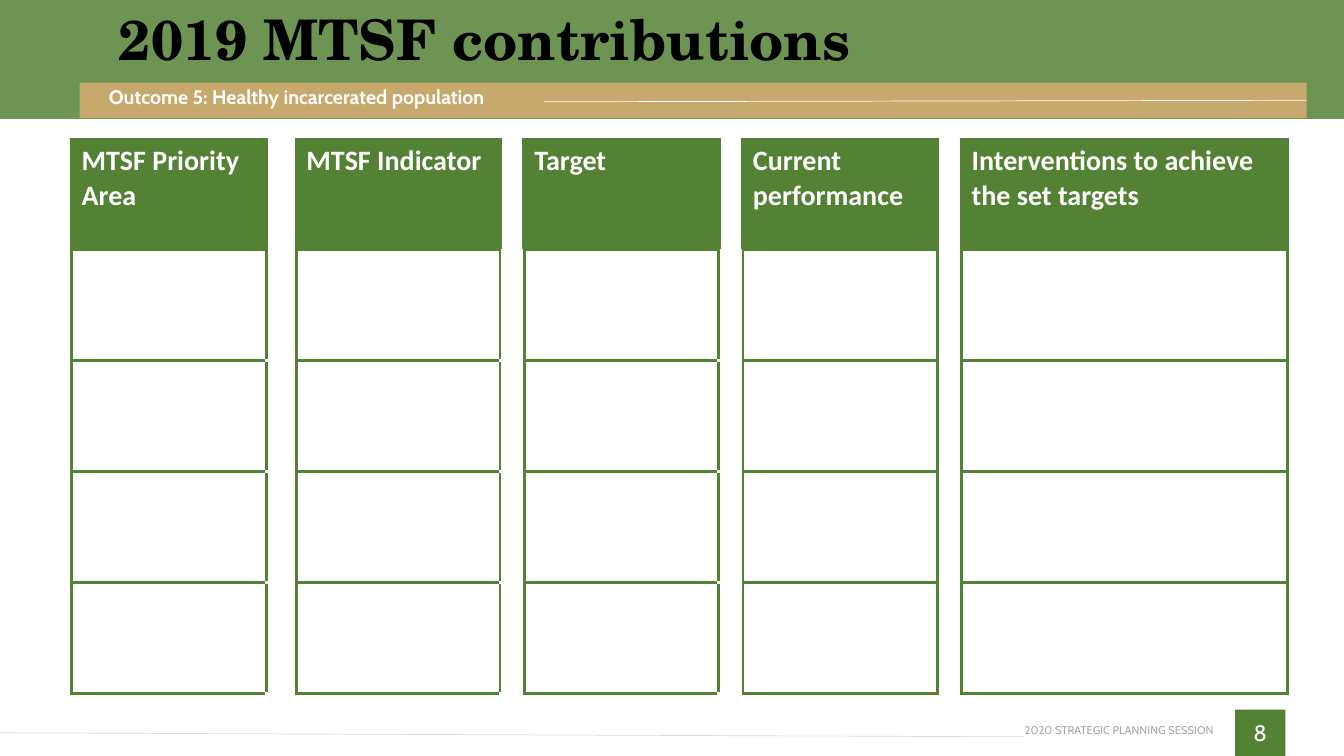
from dataclasses import dataclass

import lxml.etree
import pptx
import pptx.dml.color
import pptx.enum.shapes
import pptx.enum.text
import pptx.oxml.ns
import pptx.util

Inches = pptx.util.Inches
Kind = pptx.enum.shapes.MSO_SHAPE
Align = pptx.enum.text.PP_ALIGN
Anchor = pptx.enum.text.MSO_ANCHOR
Fit = pptx.enum.text.MSO_AUTO_SIZE
qn = pptx.oxml.ns.qn


@dataclass(frozen=True)
class Theme:
    green: str = "548235"
    gold: str = "C7A96E"
    white: str = "FFFFFF"
    black: str = "000000"
    pale: str = "D9D9D9"
    gray: str = "A6A6A6"
    head: str = "TeX Gyre Schola"
    body: str = "Cabin"
    grid: str = "Calibri"
    title: float = 40
    label: float = 20
    page: float = 16
    sub: float = 14
    foot: float = 8
    thin: float = 0.5
    edge: float = 2.25
    thick: float = 3


@dataclass(frozen=True)
class Box:
    left: float
    top: float
    width: float
    height: float
    fill: str
    kind: Kind = Kind.RECTANGLE


@dataclass(frozen=True)
class Note:
    left: float
    top: float
    width: float
    height: float
    text: str
    size: float
    color: str
    bold: bool
    align: Align


@dataclass(frozen=True)
class Column:
    width: float
    label: str = ""
    gap: bool = False
    rule: str | None = None


THEME = Theme()
PAGE = Box(12.25, 7.04, 0.5, 0.46, THEME.green)
BAND = Box(0, 0, 13.33, 1.18, THEME.green)
STRIP = Box(0.79, 0.82, 12.17, 0.35, THEME.gold, Kind.ROUNDED_RECTANGLE)
NOTES = (
    Note(10.15, 7.18, 1.89, 0.13, "2020 STRATEGIC PLANNING SESSION",
         THEME.foot, THEME.gray, False, Align.RIGHT),
    Note(1.08, 0.84, 7.51, 0.24, "Outcome 5: Healthy incarcerated population",
         THEME.sub, THEME.white, True, Align.LEFT),
)
COLUMNS = (
    Column(1.93, "MTSF Priority Area"),
    Column(0.3, gap=True, rule=THEME.white),
    Column(2.02, "MTSF Indicator"),
    Column(0.23, gap=True, rule=THEME.white),
    Column(1.93, "Target"),
    Column(0.23, gap=True, rule=THEME.white),
    Column(1.93, "Current performance"),
    Column(0.23, gap=True),
    Column(3.23, "Interventions to achieve the set targets"),
)
ROWS = 5
ROW_HEIGHT = 1.1


def paint(color: str) -> pptx.dml.color.RGBColor:
    return pptx.dml.color.RGBColor.from_string(color)


def style(para, face: str, size: float, color: str, bold: bool = False) -> None:
    para.font.name = face
    para.font.size = pptx.util.Pt(size)
    para.font.bold = bold
    para.font.color.rgb = paint(color)


def add_box(slide, box: Box):
    shape = slide.shapes.add_shape(
        box.kind, Inches(box.left), Inches(box.top),
        Inches(box.width), Inches(box.height))
    shape.shadow.inherit = False
    shape.fill.solid()
    shape.fill.fore_color.rgb = paint(box.fill)
    shape.line.fill.background()
    return shape


def add_line(slide, x1: float, y1: float, x2: float, y2: float, color: str):
    line = slide.shapes.add_connector(
        pptx.enum.shapes.MSO_CONNECTOR.STRAIGHT,
        Inches(x1), Inches(y1), Inches(x2), Inches(y2))
    line.line.color.rgb = paint(color)
    line.line.width = pptx.util.Pt(THEME.thin)
    lxml.etree.SubElement(line._element.spPr, qn("a:effectLst"))
    return line


def add_note(slide, note: Note) -> None:
    shape = slide.shapes.add_textbox(
        Inches(note.left), Inches(note.top),
        Inches(note.width), Inches(note.height))
    frame = shape.text_frame
    frame.word_wrap = True
    frame.auto_size = Fit.SHAPE_TO_FIT_TEXT
    frame.vertical_anchor = Anchor.MIDDLE
    frame.margin_left = frame.margin_right = 0
    frame.margin_top = frame.margin_bottom = 0
    para = frame.paragraphs[0]
    para.text = note.text
    para.alignment = note.align
    style(para, THEME.body, note.size, note.color, note.bold)


def add_edge(cell, side: str, color: str | None, width: float) -> None:
    props = cell._tc.get_or_add_tcPr()
    edge = lxml.etree.SubElement(
        props, qn(f"a:ln{side}"), w=str(pptx.util.Pt(width)))
    if color is None:
        lxml.etree.SubElement(edge, qn("a:noFill"))
    else:
        fill = lxml.etree.SubElement(edge, qn("a:solidFill"))
        lxml.etree.SubElement(fill, qn("a:srgbClr"), val=color)


def fill_cell(cell, column: Column, first: bool) -> None:
    side_width = THEME.thick if first else THEME.edge
    for side in "LRTB":
        flat = side in "TB"
        color = column.rule if column.gap and flat else THEME.green
        add_edge(cell, side, color, THEME.edge if flat else side_width)
    cell.fill.solid()
    head = first and not column.gap
    cell.fill.fore_color.rgb = paint(THEME.green if head else THEME.white)
    if head:
        cell.text = column.label
        style(cell.text_frame.paragraphs[0], THEME.grid, THEME.label,
              THEME.white, True)


def add_grid(slide) -> None:
    width = sum(column.width for column in COLUMNS)
    table = slide.shapes.add_table(
        ROWS, len(COLUMNS), Inches(0.71), Inches(1.38),
        Inches(width), Inches(ROWS * ROW_HEIGHT)).table
    table.first_row = table.horz_banding = False
    for row in table.rows:
        row.height = Inches(ROW_HEIGHT)
    for x, column in enumerate(COLUMNS):
        table.columns[x].width = Inches(column.width)
        for y in range(ROWS):
            fill_cell(table.cell(y, x), column, y == 0)


def set_title(slide) -> None:
    title = slide.shapes.title
    title.left, title.top = Inches(1.08), Inches(0.04)
    title.width, title.height = Inches(11.96), Inches(0.76)
    frame = title.text_frame
    frame.text = "2019 MTSF contributions"
    frame.auto_size = Fit.NONE
    frame.vertical_anchor = Anchor.MIDDLE
    para = frame.paragraphs[0]
    para.alignment = Align.LEFT
    para.line_spacing = 0.9
    style(para, THEME.head, THEME.title, THEME.black, True)
    slide.shapes.element.append(title.element)


def main() -> None:
    deck = pptx.Presentation()
    deck.slide_width, deck.slide_height = Inches(13.33), Inches(7.5)
    slide = deck.slides.add_slide(deck.slide_layouts[5])

    page = add_box(slide, PAGE)
    page.text_frame.vertical_anchor = Anchor.MIDDLE
    para = page.text_frame.paragraphs[0]
    para.text = "8"
    para.alignment = Align.CENTER
    style(para, THEME.body, THEME.page, THEME.white)
    add_line(slide, 10.15, 7.31, 0, 7.27, THEME.pale)

    band = add_box(slide, BAND)
    tint = band._element.spPr.find(qn("a:solidFill"))[0]
    lxml.etree.SubElement(tint, qn("a:alpha"), val="85000")
    strip = add_box(slide, STRIP)
    strip.adjustments[0] = 0
    add_line(slide, 5.4, 1.01, 12.96, 1, THEME.white).end_connect(strip, 3)

    set_title(slide)
    for note in NOTES:
        add_note(slide, note)
    add_grid(slide)
    deck.save("out.pptx")


if __name__ == "__main__":
    main()
